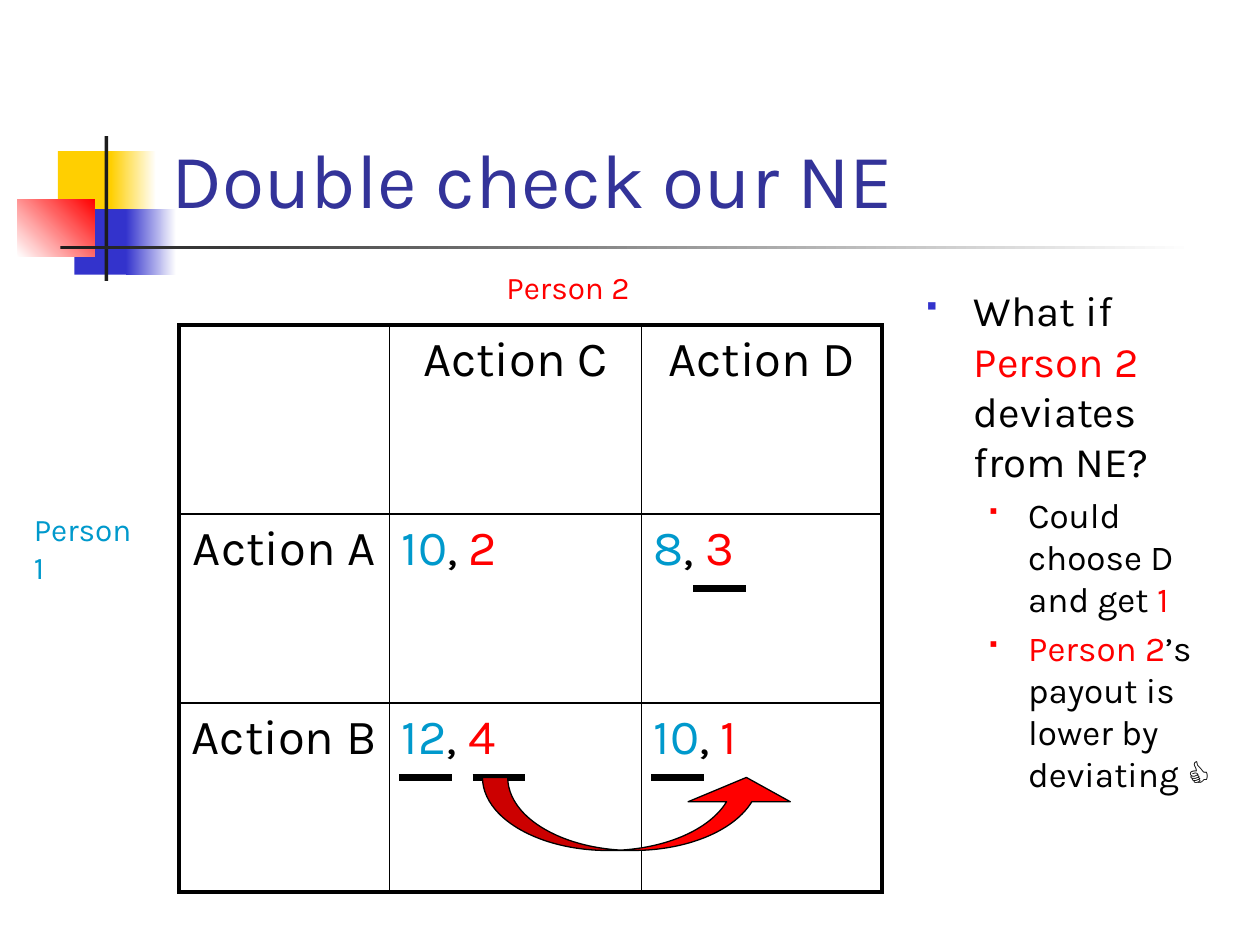
from lxml.etree import SubElement as sub
from pptx import Presentation
from pptx.dml.color import RGBColor
from pptx.enum.shapes import MSO_CONNECTOR as LINE, MSO_SHAPE as SHAPE
from pptx.enum.text import MSO_ANCHOR as ANCHOR, MSO_AUTO_SIZE as AUTO, PP_ALIGN as ALIGN
from pptx.oxml.ns import qn
from pptx.util import Inches, Pt

FONT = "Karla"
BLACK, WHITE, RED, BLUE, CYAN = "000000", "FFFFFF", "FF0000", "3333CC", "0099CC"
NAVY, GOLD, DARK = "333399", "FFCF01", "1C1C1C"


def color(code):
    return RGBColor.from_string(code)


def write(para, size, *runs):
    """Add (text, colour) runs to a paragraph."""
    for text, code in runs:
        run = para.add_run()
        run.text = text
        run.font.name = FONT
        run.font.size = Pt(size)
        run.font.color.rgb = color(code)


def place(shape, x, y, w, h):
    """Move a placeholder and bring it to the front."""
    shape.left, shape.top = Inches(x), Inches(y)
    shape.width, shape.height = Inches(w), Inches(h)
    shape.element.getparent().append(shape.element)
    frame = shape.text_frame
    frame.word_wrap = True
    frame.auto_size = AUTO.NONE
    return frame


def block(slide, x, y, w, h, first, last=None, angle=0):
    """Draw a plain rectangle, or a gradient one if a last colour is given."""
    box = slide.shapes.add_shape(SHAPE.RECTANGLE, Inches(x), Inches(y), Inches(w), Inches(h))
    box.shadow.inherit = False
    box.line.fill.background()
    if last is None:
        box.fill.solid()
        box.fill.fore_color.rgb = color(first)
        return
    box.fill.gradient()
    box.fill.gradient_angle = angle
    for stop, code in zip(box.fill.gradient_stops, (first, last)):
        stop.color.rgb = color(code)


def add_decor(slide, x, y):
    # Coloured squares, then the cross lines
    block(slide, x + 0.32, y + 0.12, 0.48, 0.52, GOLD)
    block(slide, x + 0.74, y + 0.12, 0.36, 0.52, GOLD, WHITE)
    block(slide, x + 0.45, y + 0.58, 0.46, 0.52, BLUE)
    block(slide, x + 0.86, y + 0.58, 0.4, 0.52, BLUE, WHITE)
    block(slide, x, y + 0.5, 0.61, 0.46, WHITE, RED, 45)
    block(slide, x + 0.69, y, 0.03, 1.15, DARK)
    block(slide, x + 0.34, y + 0.87, 9, 0.03, DARK, WHITE)


def add_title(slide, x, y, w, h):
    frame = place(slide.shapes.title, x, y, w, h)
    frame.vertical_anchor = ANCHOR.BOTTOM
    para = frame.paragraphs[0]
    para.alignment = ALIGN.LEFT
    write(para, 44, ("Double check our NE", NAVY))


def bullet(para, left, hang, code, size):
    props = para._p.get_or_add_pPr()
    props.set("marL", str(Inches(left)))
    props.set("indent", str(-Inches(hang)))
    sub(sub(props, qn("a:buClr")), qn("a:srgbClr"), val=code)
    sub(props, qn("a:buSzPct"), val=str(size * 1000))
    sub(props, qn("a:buFont"), typeface="Wingdings")
    sub(props, qn("a:buChar"), char="§")


def add_notes(slide, x, y, w, h):
    frame = place(slide.placeholders[1], x, y, w, h)
    items = [
        (0, [("What if ", BLACK), ("Person 2 ", RED), ("deviates from NE?", BLACK)]),
        (1, [("Could choose D and get ", BLACK), ("1", RED)]),
        (1, [("Person 2", RED), ("’s payout is lower by deviating 👍", BLACK)]),
    ]
    styles = [(24, 0.38, 0.38, BLUE, 60), (20, 0.81, 0.31, RED, 55)]
    for i, (level, runs) in enumerate(items):
        para = frame.add_paragraph() if i else frame.paragraphs[0]
        size, left, hang, code, scale = styles[level]
        para.level = level
        para.space_before = Pt(size * 0.2)
        bullet(para, left, hang, code, scale)
        write(para, size, *runs)


def border(cell, **widths):
    props = cell._tc.get_or_add_tcPr()
    for side in "LRTB":
        line = sub(props, qn("a:ln" + side), w=str(Pt(widths[side])))
        sub(sub(line, qn("a:solidFill")), qn("a:srgbClr"), val=BLACK)


def add_game(slide, x, y, w, h):
    heads = ["", "Action C", "Action D"]
    rows = [("Action A", (10, 2), (8, 3)), ("Action B", (12, 4), (10, 1))]
    grid = [heads, *rows]
    frame = slide.shapes.add_table(3, 3, Inches(x), Inches(y), Inches(w), Inches(h))
    table = frame.table
    table.first_row = table.horz_banding = False
    for col, width in zip(table.columns, (1.67, 2, w - 3.67)):
        col.width = Inches(width)
    for r, row in enumerate(grid):
        table.rows[r].height = Inches(h / 3)
        for c, value in enumerate(row):
            cell = table.cell(r, c)
            # Heavy lines outside, thin lines inside
            edges = dict(L=c == 0, R=c == 2, T=r == 0, B=r == 2)
            border(cell, **{side: 2.25 if outer else 1 for side, outer in edges.items()})
            cell.fill.background()
            para = cell.text_frame.paragraphs[0]
            para.space_before = Pt(5.6)
            if isinstance(value, tuple):
                one, two = value
                write(para, 28, (str(one), CYAN), (", ", BLACK), (str(two), RED))
            elif value:
                para.alignment = ALIGN.CENTER
                write(para, 28, (value, BLACK))


def add_label(slide, x, y, w, h, text, code):
    box = slide.shapes.add_textbox(Inches(x), Inches(y), Inches(w), Inches(h))
    box.text_frame.word_wrap = True
    write(box.text_frame.paragraphs[0], 18, (text, code))


def add_marks(slide, x, y):
    # Underlines below the best replies
    for dx, dy in ((1.75, 3.59), (3.75, 3.59), (4.08, 2.09), (2.33, 3.59)):
        left, top = Inches(x + dx), Inches(y + dy)
        line = slide.shapes.add_connector(LINE.STRAIGHT, left, top, left + Inches(0.42), top)
        line.line.color.rgb = color(BLACK)
        line.line.width = Pt(4)
        sub(line.element.spPr, qn("a:effectLst"))
    # Curved arrow from C to D
    arrow = slide.shapes.add_shape(SHAPE.CURVED_UP_ARROW, Inches(x + 2.41), Inches(y + 3.59),
                                   Inches(2.5), Inches(0.58))
    for i, value in enumerate((0.345, 1.399, 0.333)):
        arrow.adjustments[i] = value
    arrow.shadow.inherit = False
    arrow.fill.solid()
    arrow.fill.fore_color.rgb = color(RED)
    arrow.line.color.rgb = color(BLACK)
    arrow.line.width = Pt(0.75)


def main():
    deck = Presentation()
    deck.slide_width, deck.slide_height = Inches(10), Inches(7.5)
    slide = deck.slides.add_slide(deck.slide_layouts[1])
    add_decor(slide, 0.14, 1.08)
    add_title(slide, 1.26, 0.23, 8.52, 1.6)
    add_notes(slide, 7.25, 2.21, 2.54, 4.5)
    add_game(slide, 1.42, 2.58, 5.58, 4.5)
    add_label(slide, 0.17, 4, 1, 0.7, "Person 1", CYAN)
    add_label(slide, 3.92, 2.08, 1.42, 0.4, "Person 2", RED)
    add_marks(slide, 1.42, 2.58)
    deck.save("out.pptx")


if __name__ == "__main__":
    main()
